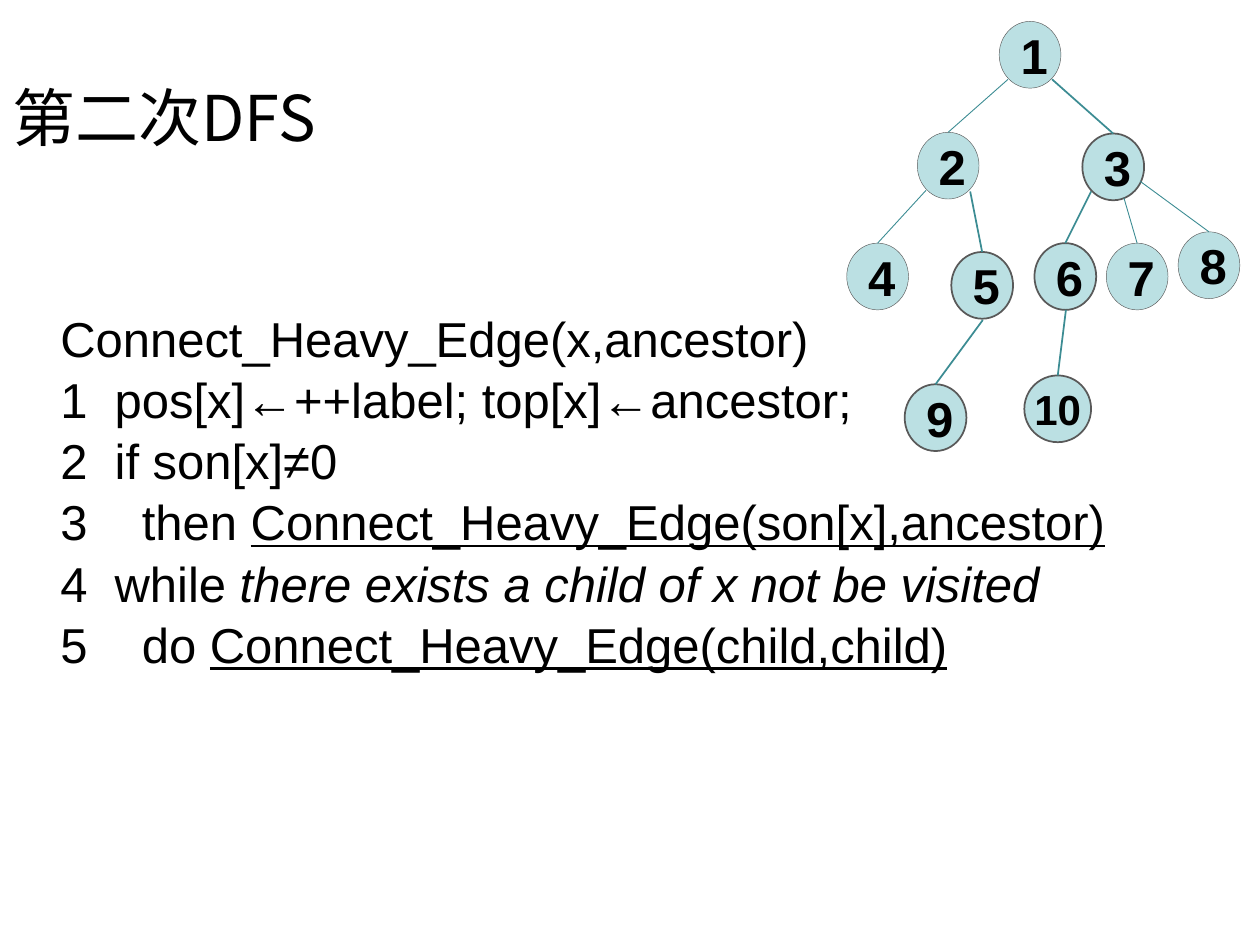
"""Build a slide pairing a heavy-edge DFS listing with its tree."""
from dataclasses import dataclass

from lxml import etree
from pptx import Presentation
from pptx.dml.color import RGBColor as RGB
from pptx.enum.shapes import MSO_CONNECTOR as CONN, MSO_SHAPE as SHAPE
from pptx.enum.text import MSO_ANCHOR as ANCHOR, PP_ALIGN as ALIGN
from pptx.oxml.ns import qn
from pptx.util import Inches, Pt


@dataclass
class Theme:
    ink: RGB = RGB(0x00, 0x00, 0x00)
    node: RGB = RGB(0xBB, 0xE0, 0xE3)
    outline: RGB = RGB(0x59, 0x59, 0x59)
    edge: RGB = RGB(0x3C, 0x8C, 0x93)
    title_font: str = "Noto Sans CJK SC"
    font: str = "Arial"
    title: int = 36
    text: int = 28
    small: int = 24


T = Theme()


def add_run(p, text, size=T.text, font=T.font):
    r = p.add_run()
    r.text = text
    r.font.size = Pt(size)
    r.font.name = font
    r.font.color.rgb = T.ink
    return r


prs = Presentation()
prs.slide_width, prs.slide_height = Inches(10), Inches(7.5)
s = prs.slides.add_slide(prs.slide_layouts[5])

title = s.shapes.title
title.left, title.top = Inches(0), Inches(0.3)
title.width, title.height = Inches(9), Inches(1.25)
tf = title.text_frame
tf.vertical_anchor = ANCHOR.MIDDLE
p = tf.paragraphs[0]
p.alignment = ALIGN.LEFT
r = add_run(p, "第二次DFS", T.title, T.title_font)
ea = etree.SubElement(r.font._element, qn("a:ea"))
ea.set("typeface", T.title_font)

code = [
    ("Connect_Heavy_Edge(x,ancestor)", "", ""),
    ("1  pos[x]←++label; top[x]←ancestor;", "", ""),
    ("2  if son[x]≠0", "", ""),
    ("3    then ", "Connect_Heavy_Edge(son[x],ancestor)", "underline"),
    ("4  while ", "there exists a child of x not be visited", "italic"),
    ("5    do ", "Connect_Heavy_Edge(child,child)", "underline"),
]
listing = s.shapes.add_textbox(Inches(0.38), Inches(2.38), Inches(9.12), Inches(3.4))
tf = listing.text_frame
tf.word_wrap = True
for i, (plain, marked, style) in enumerate(code):
    p = tf.paragraphs[0] if i == 0 else tf.add_paragraph()
    p.line_spacing = 1.04
    add_run(p, plain)
    if marked:
        r = add_run(p, marked)
        r.font.underline = style == "underline"
        r.font.italic = style == "italic"

tree = [
    ("1", 7.93, 0.17, False, None),
    ("2", 7.28, 1.05, False, (8, 0.63)),
    ("3", 8.59, 1.06, True, (8.35, 0.63)),
    ("4", 6.72, 1.93, False, (7.35, 1.51)),
    ("5", 7.55, 2, True, (7.7, 1.52)),
    ("6", 8.21, 1.93, True, (8.66, 1.52)),
    ("7", 8.78, 1.93, False, (8.92, 1.57)),
    ("8", 9.35, 1.84, False, (9.05, 1.44)),
    ("9", 7.18, 3.05, True, (7.8, 2.54)),
    ("10", 8.13, 2.98, True, (8.46, 2.46)),
]
for label, x, y, heavy, start in tree:
    wide = len(label) > 1
    node = s.shapes.add_shape(SHAPE.OVAL, Inches(x), Inches(y),
                              Inches(0.53 if wide else 0.49), Inches(0.53))
    node.shadow.inherit = False
    node.fill.solid()
    node.fill.fore_color.rgb = T.node
    node.line.color.rgb = T.outline
    node.line.width = Pt(1 if heavy else 0.25)
    tf = node.text_frame
    tf.word_wrap = True
    tf.vertical_anchor = ANCHOR.MIDDLE
    if wide:
        tf.margin_left = tf.margin_right = tf.margin_top = tf.margin_bottom = 0
    p = tf.paragraphs[0]
    p.alignment = ALIGN.CENTER
    add_run(p, label, T.small if wide else T.text).font.bold = True

    if start:
        edge = s.shapes.add_connector(CONN.STRAIGHT, Inches(start[0]), Inches(start[1]),
                                      Inches(x), Inches(y))
        edge.end_connect(node, 0)
        edge.line.color.rgb = T.edge
        edge.line.width = Pt(1 if heavy else 0.5)
        etree.SubElement(edge._element.spPr, qn("a:effectLst"))

prs.save("out.pptx")
